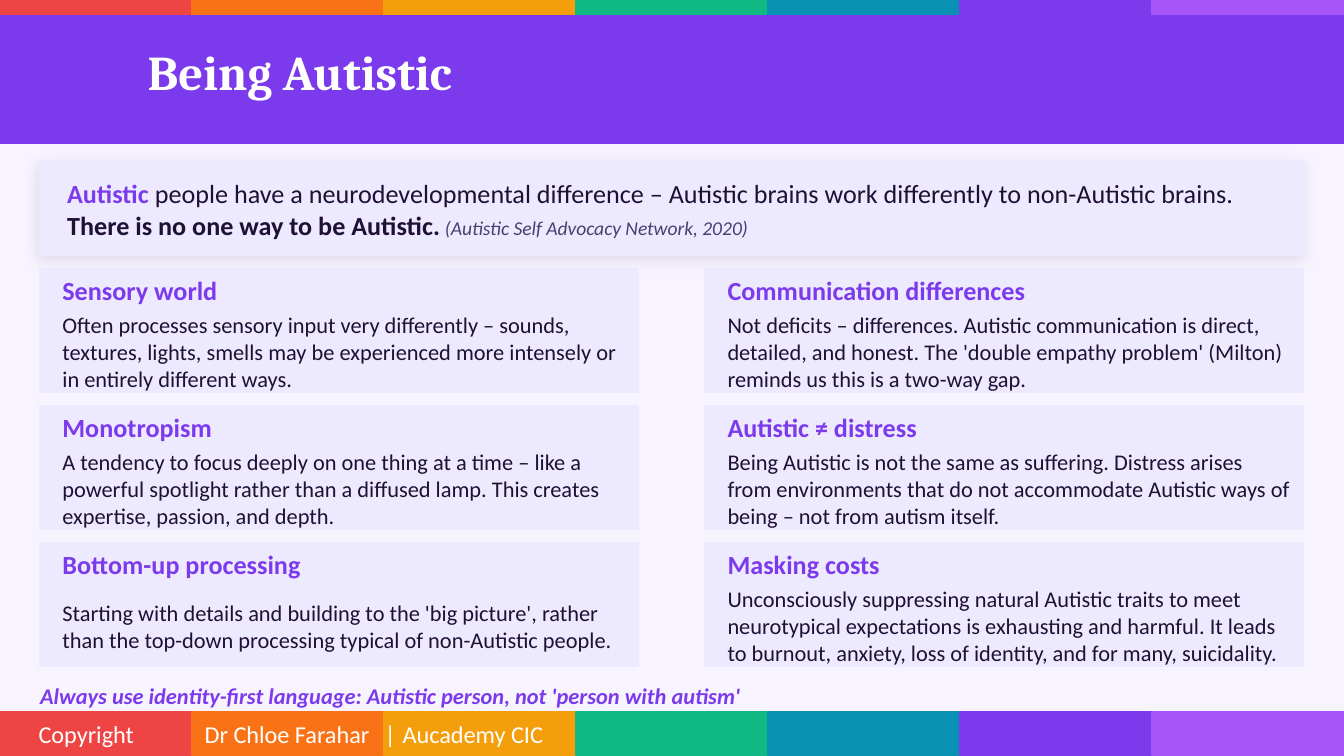
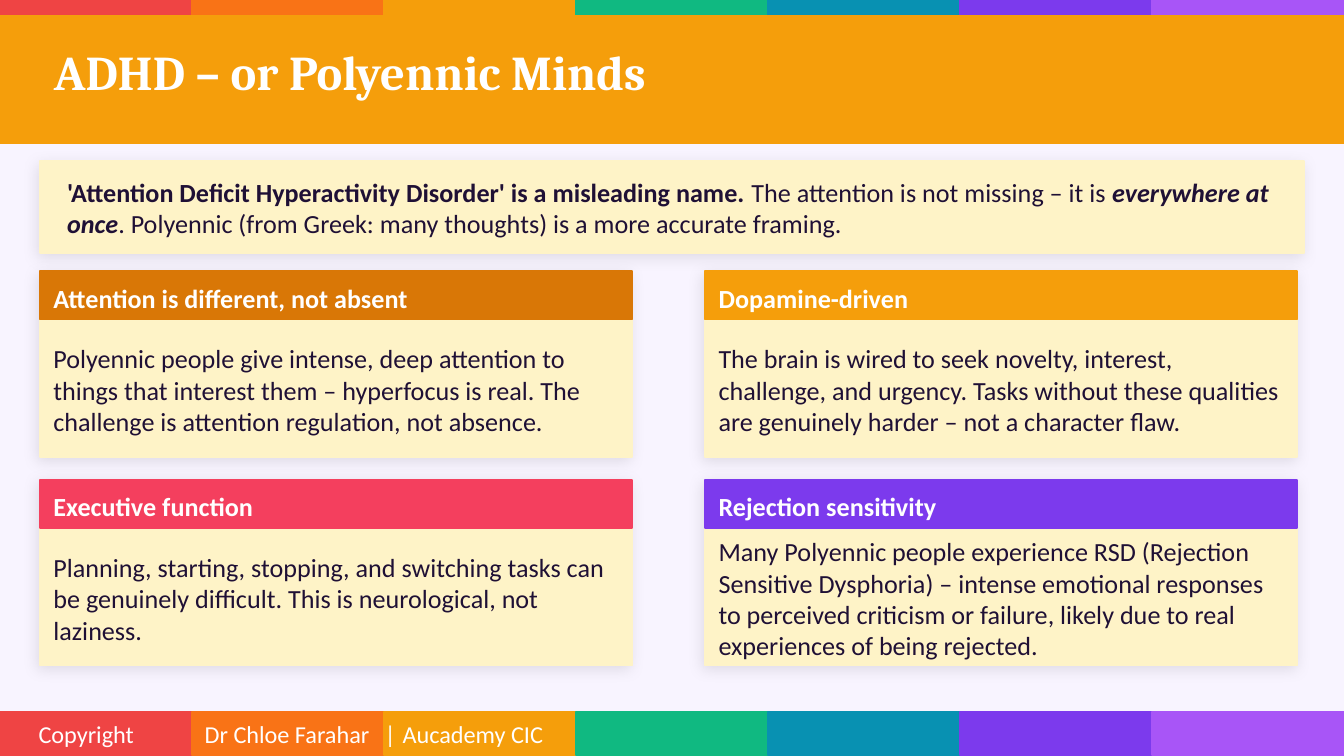
import collections

import lxml.etree
import pptx
import pptx.dml.color
import pptx.enum.shapes
import pptx.enum.text
import pptx.oxml.ns
import pptx.util

Cm = pptx.util.Cm
Pt = pptx.util.Pt
RGB = pptx.dml.color.RGBColor
qn = pptx.oxml.ns.qn

RED = RGB(0xEF, 0x44, 0x44)
ORANGE = RGB(0xF9, 0x73, 0x16)
AMBER = RGB(0xF5, 0x9E, 0x0B)
GREEN = RGB(0x10, 0xB9, 0x81)
TEAL = RGB(0x08, 0x91, 0xB2)
VIOLET = RGB(0x7C, 0x3A, 0xED)
PURPLE = RGB(0xA8, 0x55, 0xF7)
RAINBOW = (RED, ORANGE, AMBER, GREEN, TEAL, VIOLET, PURPLE)
OCHRE = RGB(0xD9, 0x77, 0x06)
ROSE = RGB(0xF4, 0x3F, 0x5E)
LILAC = RGB(0xED, 0xE9, 0xFE)
CREAM = RGB(0xFE, 0xF3, 0xC7)
PAPER = RGB(0xF8, 0xF4, 0xFF)
INK = RGB(0x1F, 0x10, 0x35)
MUTED = RGB(0x4B, 0x3F, 0x72)
WHITE = RGB(0xFF, 0xFF, 0xFF)

# All lengths are centimetres.
SLIDE_W, SLIDE_H = 25.4, 14.29
MARGIN = 0.76
COLUMN_STEP = 12.57
FOOTER_TABS = (3.14, 6.54, 6.88)

Box = collections.namedtuple("Box", "x y w h")
Run = collections.namedtuple(
    "Run", "text size color bold italic font",
    defaults=(14, INK, False, False, "Calibri"))


def inside(box, dx, dy, w, h):
    """Return a box placed relative to the corner of another."""
    return Box(box.x + dx, box.y + dy, w, h)


def add_rect(slide, box, color, shadow=False):
    sp = slide.shapes.add_shape(
        pptx.enum.shapes.MSO_SHAPE.RECTANGLE, *map(Cm, box))
    sp.shadow.inherit = False
    sp.fill.solid()
    sp.fill.fore_color.rgb = color
    sp.line.color.rgb = color
    sp.line.width = Pt(1)
    if shadow:
        effects = sp._element.spPr.find(qn("a:effectLst"))
        outer = lxml.etree.SubElement(
            effects, qn("a:outerShdw"), blurRad=str(Pt(8)), dist=str(Pt(2)),
            dir=str(135 * 60000), algn="bl", rotWithShape="0")
        black = lxml.etree.SubElement(outer, qn("a:srgbClr"), val="000000")
        lxml.etree.SubElement(black, qn("a:alpha"), val="10000")


def add_text(slide, box, *runs, inset=True, tabs=()):
    tf = slide.shapes.add_textbox(*map(Cm, box)).text_frame
    tf.word_wrap = True
    tf.vertical_anchor = pptx.enum.text.MSO_ANCHOR.MIDDLE
    if not inset:
        tf.margin_left = tf.margin_top = tf.margin_right = tf.margin_bottom = 0
    p = tf.paragraphs[0]
    if tabs:
        tab_list = lxml.etree.SubElement(p._p.get_or_add_pPr(), qn("a:tabLst"))
        for pos in tabs:
            lxml.etree.SubElement(
                tab_list, qn("a:tab"), pos=str(Cm(pos)), algn="l")
    for run in runs:
        r = p.add_run()
        r.text = run.text
        r.font.name = run.font
        r.font.size = Pt(run.size)
        r.font.bold = run.bold
        r.font.italic = run.italic
        r.font.color.rgb = run.color


def add_rainbow(slide, box):
    w = box.w / len(RAINBOW)
    for i, color in enumerate(RAINBOW):
        add_rect(slide, inside(box, i * w, 0, w, box.h), color)


def add_header(slide, box, title, color, indent):
    add_rect(slide, box, color)
    add_text(slide, inside(box, indent, 0.15, box.w - indent - 1.02, 1.78),
             Run(title, 26, WHITE, True, font="Cambria"), inset=False)


def add_footer(slide, box):
    add_rainbow(slide, box)
    add_text(slide, inside(box, 0.48, -0.1, 21.03, 1.02),
             Run("Copyright\tDr Chloe Farahar\t|\tAucademy CIC", 13, WHITE),
             tabs=FOOTER_TABS)


def add_intro(slide, box, color, runs):
    add_rect(slide, box, color, shadow=True)
    add_text(slide, inside(box, 0.51, 0.18, 23.11, box.h - 0.33),
             *runs, inset=False)


def add_plain_card(slide, box, title, body):
    add_rect(slide, box, LILAC)
    add_text(slide, inside(box, 0.42, 0.05, 10.67, 0.71),
             Run(title, 14, VIOLET, True), inset=False)
    add_text(slide, inside(box, 0.42, 0.81, 10.67, 1.52),
             Run(body, 12), inset=False)


def add_banner_card(slide, box, title, body, color):
    add_rect(slide, box, CREAM, shadow=True)
    add_rect(slide, inside(box, 0, 0, box.w, 0.91), color)
    add_text(slide, inside(box, 0.25, 0.15, 10.67, 0.71),
             Run(title, 14, WHITE, True), inset=False)
    add_text(slide, inside(box, 0.25, 1.07, 10.67, 2.34),
             Run(body), inset=False)


def add_grid(slide, first, row_step, columns, add_card):
    """Lay out columns of cards, the first card filling the given box."""
    for col, cards in enumerate(columns):
        for row, card in enumerate(cards):
            box = inside(first, col * COLUMN_STEP, row * row_step,
                         first.w, first.h)
            add_card(slide, box, *card)


def add_base(prs, title, color, indent):
    """Add a slide with the bands, title and footer that all slides share."""
    s = prs.slides.add_slide(prs.slide_layouts[6])
    s.background.fill.solid()
    s.background.fill.fore_color.rgb = PAPER
    add_rainbow(s, Box(0, 0, SLIDE_W, 0.3))
    add_header(s, Box(0, 0.3, SLIDE_W, 2.41), title, color, indent)
    add_footer(s, Box(0, 13.46, SLIDE_W, 0.81))
    return s


def add_autistic_slide(prs):
    s = add_base(prs, "Being Autistic", VIOLET, 2.79)
    add_intro(s, Box(MARGIN, 3.05, 23.88, 1.78), LILAC, [
        Run("Autistic", color=VIOLET, bold=True),
        Run(" people have a neurodevelopmental difference – Autistic brains "
            "work differently to non-Autistic brains. "),
        Run("There is no one way to be Autistic.", bold=True),
        Run(" (Autistic Self Advocacy Network, 2020)", 10.5, MUTED,
            italic=True),
    ])
    left = [
        ("Sensory world",
         "Often processes sensory input very differently – sounds, textures, "
         "lights, smells may be experienced more intensely or in entirely "
         "different ways."),
        ("Monotropism",
         "A tendency to focus deeply on one thing at a time – like a powerful "
         "spotlight rather than a diffused lamp. This creates expertise, "
         "passion, and depth."),
        ("Bottom-up processing",
         "Starting with details and building to the 'big picture', rather "
         "than the top-down processing typical of non-Autistic people."),
    ]
    right = [
        ("Communication differences",
         "Not deficits – differences. Autistic communication is direct, "
         "detailed, and honest. The 'double empathy problem' (Milton) reminds "
         "us this is a two-way gap."),
        ("Autistic ≠ distress",
         "Being Autistic is not the same as suffering. Distress arises from "
         "environments that do not accommodate Autistic ways of being – not "
         "from autism itself."),
        ("Masking costs",
         "Unconsciously suppressing natural Autistic traits to meet "
         "neurotypical expectations is exhausting and harmful. It leads to "
         "burnout, anxiety, loss of identity, and for many, suicidality."),
    ]
    add_grid(s, Box(MARGIN, 5.08, 11.3, 2.34), 2.59, (left, right),
             add_plain_card)
    add_text(s, Box(MARGIN, 12.9, 23.88, 0.51),
             Run("Always use identity-first language: Autistic person, "
                 "not 'person with autism'", 12, VIOLET, True, True),
             inset=False)


def add_adhd_slide(prs):
    s = add_base(prs, "ADHD – or Polyennic Minds", AMBER, 1.02)
    add_intro(s, Box(MARGIN, 3.05, 23.88, 1.73), CREAM, [
        Run("'Attention Deficit Hyperactivity Disorder' is a misleading "
            "name. ", bold=True),
        Run("The attention is not missing – it is "),
        Run("everywhere at once", bold=True, italic=True),
        Run(". Polyennic (from Greek: many thoughts) is a more accurate "
            "framing."),
    ])
    left = [
        ("Attention is different, not absent",
         "Polyennic people give intense, deep attention to things that "
         "interest them – hyperfocus is real. The challenge is attention "
         "regulation, not absence.", OCHRE),
        ("Executive function",
         "Planning, starting, stopping, and switching tasks can be genuinely "
         "difficult. This is neurological, not laziness.", ROSE),
    ]
    right = [
        ("Dopamine-driven",
         "The brain is wired to seek novelty, interest, challenge, and "
         "urgency. Tasks without these qualities are genuinely harder – not "
         "a character flaw.", AMBER),
        ("Rejection sensitivity",
         "Many Polyennic people experience RSD (Rejection Sensitive "
         "Dysphoria) – intense emotional responses to perceived criticism or "
         "failure, likely due to real experiences of being rejected.", VIOLET),
    ]
    add_grid(s, Box(MARGIN, 5.13, 11.18, 3.51), 3.94, (left, right),
             add_banner_card)


def main():
    prs = pptx.Presentation()
    prs.slide_width, prs.slide_height = Cm(SLIDE_W), Cm(SLIDE_H)
    add_autistic_slide(prs)
    add_adhd_slide(prs)
    prs.save("out.pptx")


if __name__ == "__main__":
    main()
